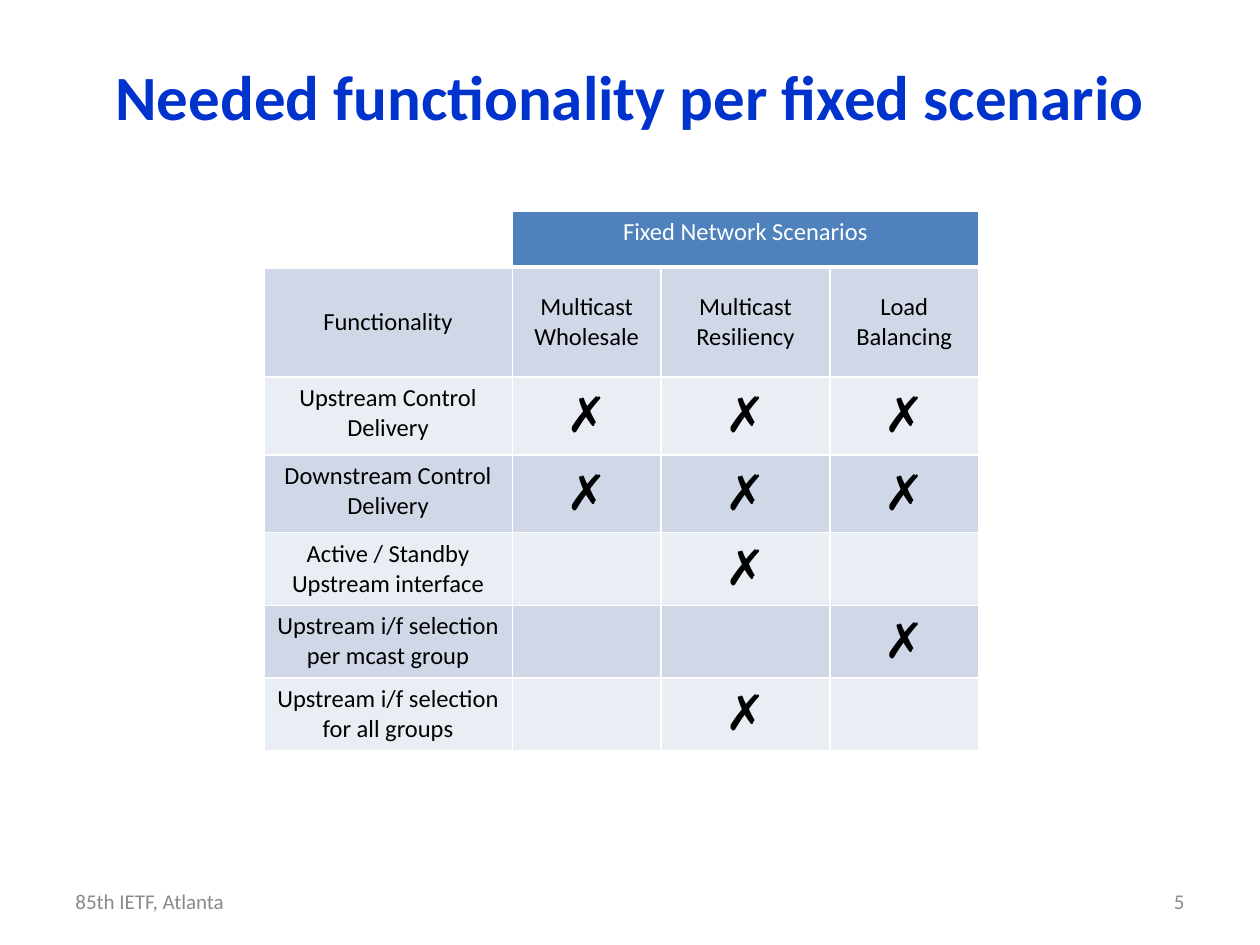
from lxml.etree import SubElement
from pptx import Presentation
from pptx.dml.color import RGBColor
from pptx.enum.text import MSO_ANCHOR as Anchor, PP_ALIGN as Align
from pptx.oxml.ns import qn
from pptx.util import Pt

CROSS = "✗"
COLUMN_WIDTHS = [142, 85, 96.5, 85]
ROW_HEIGHTS = [32, 63, 44.5, 44.5, 32, 32, 32]
SCENARIOS = ["Multicast Wholesale", "Multicast Resiliency", "Load Balancing"]
FUNCTIONS = [
    ("Upstream Control Delivery", [1, 2, 3]),
    ("Downstream Control Delivery", [1, 2, 3]),
    ("Active / Standby Upstream interface", [2]),
    ("Upstream i/f selection per mcast group", [3]),
    ("Upstream i/f selection for all groups", [2]),
]


def color(hex_value):
    return RGBColor.from_string(hex_value)


def write(frame, text, size, hex_value, align, bold=False):
    paragraph = frame.paragraphs[0]
    paragraph.alignment = align
    run = paragraph.add_run()
    run.text = text
    run.font.name = "Calibri"
    run.font.size = Pt(size)
    run.font.bold = bold
    run.font.color.rgb = color(hex_value)


def place(shape, box):
    shape.left, shape.top, shape.width, shape.height = map(Pt, box)


def add_title(slide, box, text):
    title = slide.shapes.title
    place(title, box)
    title.text_frame.vertical_anchor = Anchor.MIDDLE
    write(title.text_frame, text, 36, "0033CC", Align.CENTER, True)


def add_footer(slide, box, text, hex_value, align):
    frame = slide.shapes.add_textbox(*map(Pt, box)).text_frame
    frame.word_wrap = True
    frame.vertical_anchor = Anchor.MIDDLE
    write(frame, text, 12, hex_value, align)


def add_borders(cell, bottom_width):
    properties = cell._tc.get_or_add_tcPr()
    widths = {"a:lnL": 1, "a:lnR": 1, "a:lnT": 1, "a:lnB": bottom_width}
    for tag, width in widths.items():
        line = SubElement(properties, qn(tag), w=str(Pt(width)))
        fill = SubElement(line, qn("a:solidFill"))
        SubElement(fill, qn("a:srgbClr"), val="FFFFFF")


def fill_cell(cell, text, hex_fill, anchor=Anchor.MIDDLE, hex_text="000000"):
    cell.fill.solid()
    cell.fill.fore_color.rgb = color(hex_fill)
    cell.vertical_anchor = anchor
    if text:
        size = 28 if text == CROSS else 14
        write(cell.text_frame, text, size, hex_text, Align.CENTER)


def add_scenario_table(slide, box):
    shape = slide.shapes.add_table(len(ROW_HEIGHTS), len(COLUMN_WIDTHS), *map(Pt, box))
    table = shape.table
    table.first_row = table.horz_banding = False
    for column, width in zip(table.columns, COLUMN_WIDTHS):
        column.width = Pt(width)
    for row_index, (row, height) in enumerate(zip(table.rows, ROW_HEIGHTS)):
        row.height = Pt(height)
        for cell in row.cells:
            add_borders(cell, 3 if row_index == 0 else 1)

    table.cell(0, 0).fill.background()
    table.cell(0, 1).merge(table.cell(0, 3))
    fill_cell(table.cell(0, 1), "Fixed Network Scenarios", "4F81BD", Anchor.TOP, "FFFFFF")

    body = [["Functionality", *SCENARIOS]]
    for name, needed in FUNCTIONS:
        body.append([name] + [CROSS if column in needed else "" for column in (1, 2, 3)])
    for row_index, texts in enumerate(body, start=1):
        hex_fill = "D0D8E8" if row_index % 2 else "E9EDF4"
        for column_index, text in enumerate(texts):
            is_function_name = column_index == 0 and row_index > 1
            anchor = Anchor.TOP if is_function_name else Anchor.MIDDLE
            fill_cell(table.cell(row_index, column_index), text, hex_fill, anchor)


def main():
    presentation = Presentation()
    presentation.slide_width, presentation.slide_height = Pt(720), Pt(540)
    slide = presentation.slides.add_slide(presentation.slide_layouts[5])
    add_title(slide, (36, 36.75, 648, 36), "Needed functionality per fixed scenario")
    add_scenario_table(slide, (150.75, 120.5, sum(COLUMN_WIDTHS), sum(ROW_HEIGHTS)))
    add_footer(slide, (36, 500.5, 168, 28.75), "85th IETF, Atlanta", "898989", Align.LEFT)
    add_footer(slide, (516, 500.5, 168, 28.75), "5", "8C8C8C", Align.RIGHT)
    presentation.save("out.pptx")


if __name__ == "__main__":
    main()
